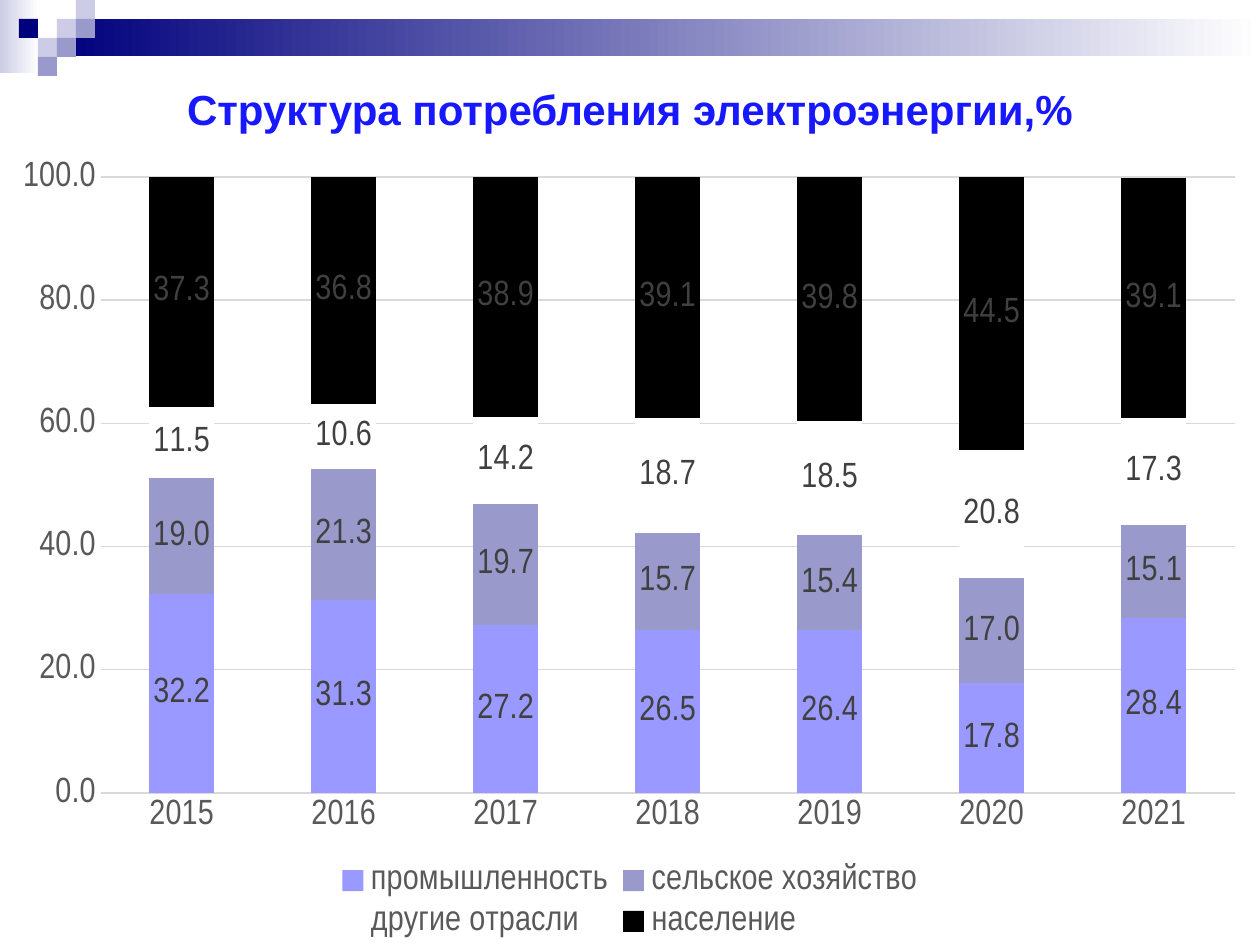
import pptx
import pptx.util
import pptx.chart.data
import pptx.enum.chart
import pptx.enum.shapes
import pptx.enum.text
from pptx.dml.color import RGBColor
import lxml.etree

PX = 914400 / 126
THEME = {
    "navy": "00007D", "lilac": "CCCCE6", "violet": "9999CC", "white": "FFFFFF",
    "title": "1818FF", "axis": "595959", "label": "404040", "grid": "D9D9D9",
    "industry": "9999FF", "black": "000000",
    "title_font": "Arial", "chart_font": "Arial Narrow",
    "title_size": 24, "chart_size": 20, "line": 0.75,
}


def color(name):
    return RGBColor.from_string(THEME[name])


def set_layout(parent, index, **fractions):
    """Give a chart part a fixed place, as fractions of the chart."""
    ns = "{http://schemas.openxmlformats.org/drawingml/2006/chart}"
    for old in parent.findall(ns + "layout"):
        parent.remove(old)
    layout = lxml.etree.Element(ns + "layout")
    manual = lxml.etree.SubElement(layout, ns + "manualLayout")
    for tag, value in fractions.items():
        lxml.etree.SubElement(manual, ns + tag).set("val", str(value))
    parent.insert(index, layout)


deck = pptx.Presentation()
deck.slide_width = round(1260 * PX)
deck.slide_height = round(945 * PX)
slide = deck.slides.add_slide(deck.slide_layouts[6])

# Header: two gradient bands, then a mosaic of squares
ornaments = [
    (0, 0, 39, 73, ("lilac", "white")),
    (57, 19, 1203, 37, ("navy", "white")),
]
mosaic = [(3, 1, "lilac"), (4, 0, "lilac"), (4, 1, "violet"), (2, 2, "lilac"),
          (1, 1, "navy"), (3, 2, "violet"), (2, 3, "violet")]
ornaments += [(19 * col, 19 * row, 19, 19, (shade,)) for col, row, shade in mosaic]
for left, top, width, height, shades in ornaments:
    ornament = slide.shapes.add_shape(
        pptx.enum.shapes.MSO_SHAPE.RECTANGLE,
        *[round(v * PX) for v in (left, top, width, height)])
    ornament.shadow.inherit = False
    ornament.line.fill.background()
    if len(shades) == 2:
        ornament.fill.gradient()
        ornament.fill.gradient_angle = 0
        for stop, shade in zip(ornament.fill.gradient_stops, shades):
            stop.color.rgb = color(shade)
    else:
        ornament.fill.solid()
        ornament.fill.fore_color.rgb = color(shades[0])

# Title
heading = slide.shapes.add_textbox(
    *[round(v * PX) for v in (63, 63, 1134, 92)]).text_frame
heading.word_wrap = True
heading.vertical_anchor = pptx.enum.text.MSO_ANCHOR.MIDDLE
heading.paragraphs[0].alignment = pptx.enum.text.PP_ALIGN.CENTER
heading_run = heading.paragraphs[0].add_run()
heading_run.text = "Структура потребления электроэнергии,%"
heading_run.font.name = THEME["title_font"]
heading_run.font.size = pptx.util.Pt(THEME["title_size"])
heading_run.font.bold = True
heading_run.font.color.rgb = color("title")

# Consumption by sector, percent
sectors = [
    ("промышленность", "industry", (32.2, 31.3, 27.2, 26.5, 26.4, 17.8, 28.4)),
    ("сельское хозяйство", "violet", (19.0, 21.3, 19.7, 15.7, 15.4, 17.0, 15.1)),
    ("другие отрасли", "white", (11.5, 10.6, 14.2, 18.7, 18.5, 20.8, 17.3)),
    ("население", "black", (37.3, 36.8, 38.9, 39.1, 39.8, 44.5, 39.1)),
]
consumption = pptx.chart.data.CategoryChartData(number_format="0.0")
consumption.categories = [str(year) for year in range(2015, 2022)]
for sector, shade, shares in sectors:
    consumption.add_series(sector, shares)
chart = slide.shapes.add_chart(
    pptx.enum.chart.XL_CHART_TYPE.COLUMN_STACKED,
    *[round(v * PX) for v in (0, 145, 1260, 800)], consumption).chart
chart.has_title = False
chart.font.name = THEME["chart_font"]
chart.font.size = pptx.util.Pt(THEME["chart_size"])
chart.font.color.rgb = color("black")

# Columns and their labels
columns = chart.plots[0]
columns.gap_width = 150
columns.overlap = 100
columns.vary_by_categories = False
fonts = []
for series, (sector, shade, shares) in zip(columns.series, sectors):
    series.format.fill.solid()
    series.format.fill.fore_color.rgb = color(shade)
    series.format.line.fill.background()
    labels = series.data_labels
    labels.show_value = True
    labels.number_format = "0.0"
    labels.number_format_is_linked = False
    labels.position = pptx.enum.chart.XL_LABEL_POSITION.CENTER
    fonts.append((labels.font, "label"))

# Axes
years, percent = chart.category_axis, chart.value_axis
for axis in (years, percent):
    axis.major_tick_mark = axis.minor_tick_mark = pptx.enum.chart.XL_TICK_MARK.NONE
    fonts.append((axis.tick_labels.font, "axis"))
percent.minimum_scale = 0
percent.maximum_scale = 100
percent.major_unit = 20
percent.has_major_gridlines = True
percent.tick_labels.number_format = "0.0"
percent.tick_labels.number_format_is_linked = False
percent.format.line.fill.background()
for line in (years.format.line, percent.major_gridlines.format.line):
    line.color.rgb = color("grid")
    line.width = pptx.util.Pt(THEME["line"])

# Legend
chart.has_legend = True
chart.legend.position = pptx.enum.chart.XL_LEGEND_POSITION.BOTTOM
chart.legend.include_in_layout = False
fonts.append((chart.legend.font, "axis"))

for font, shade in fonts:
    font.name = THEME["chart_font"]
    font.size = pptx.util.Pt(THEME["chart_size"])
    font.color.rgb = color(shade)

# Places of the plot and the legend
set_layout(chart.plots[0]._element.getparent(), 0, layoutTarget="inner",
           xMode="edge", yMode="edge", x=0.08, y=0.04, w=0.9, h=0.77)
set_layout(chart.legend._element, 1, xMode="edge", yMode="edge",
           x=0.26, y=0.89, w=0.48, h=0.11)

deck.save("out.pptx")
